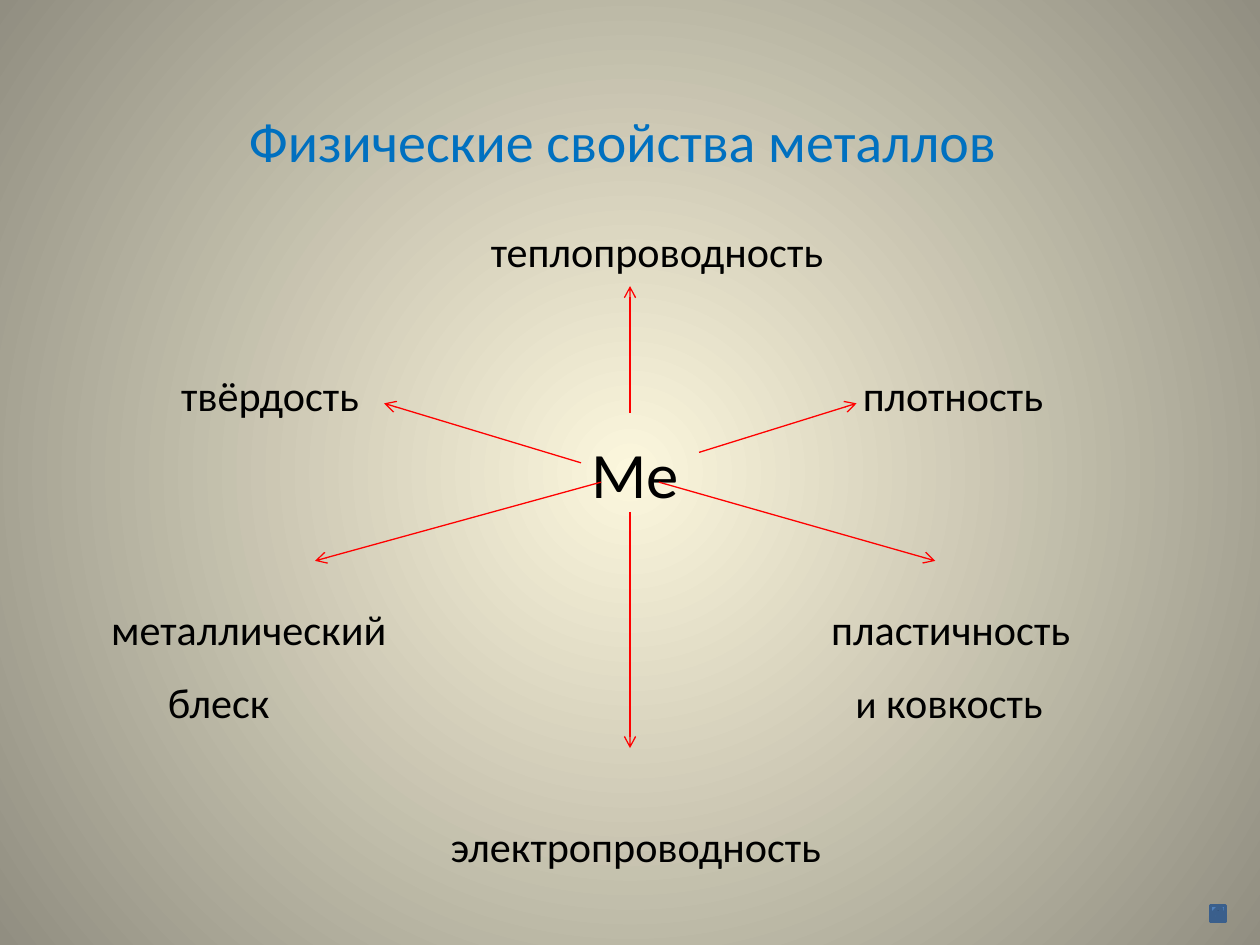
"""Build a slide showing the physical properties of metals around the symbol Ме."""
from lxml import etree
from pptx import Presentation
from pptx.dml.color import RGBColor
from pptx.enum import shapes, text
from pptx.oxml import parse_xml
from pptx.oxml.ns import nsdecls, qn
from pptx.util import Pt

COLORS = {"title": "0070C0", "label": "000000", "arrow": "FF0000", "center": "FCF7DD",
          "edge": "918E81", "button": "4F81BD", "button_line": "3A5F8C"}
FONT = "Calibri"
LINE_GAP = 12.4
SIZE = 24.1

TITLE = "Физические свойства металлов"
LABELS = [
    (280.5, 128.5, 210, [(0, [("теплопроводность", SIZE)])]),
    (103.5, 211, 120, [(0, [("твёрдость", SIZE)])]),
    (493, 211, 120, [(0, [("плотность", SIZE)])]),
    (338, 248, 70, [(0, [("Ме", 37)])]),
    (63.5, 345, 180, [(0, [("металлический", SIZE)]), (32.5, [("блеск", SIZE)])]),
    (475, 345, 160, [(0, [("пластичность", SIZE)]), (14, [("и", 22.2), (" ковкость", SIZE)])]),
    (257.5, 469, 230, [(0, [("электропроводность", SIZE)])]),
]
ARROWS = [
    ((360, 236), (360, 163.5)),
    ((399.5, 258.5), (489.5, 230.5)),
    ((332, 264.5), (219.5, 230.5)),
    ((343.5, 275.5), (180, 320.5)),
    ((376.5, 275.5), (534.5, 320.5)),
    ((360, 292.5), (360, 427.5)),
]
HOME = (691.75, 517.5, 8.64, 8.64)


def rgb(name):
    return RGBColor.from_string(COLORS[name])


def add_text(slide, box, lines, color, frame_format):
    frame = slide.shapes.add_textbox(*map(Pt, box)).text_frame
    for key, value in frame_format.items():
        setattr(frame, key, value)
    for number, (indent, pieces) in enumerate(lines):
        paragraph = frame.add_paragraph() if number else frame.paragraphs[0]
        paragraph.space_before = Pt(LINE_GAP if number else 0)
        paragraph._p.get_or_add_pPr().set("marL", str(Pt(indent)))
        for words, size in pieces:
            run = paragraph.add_run()
            run.text = words
            for key, value in {"name": FONT, "size": Pt(size)}.items():
                setattr(run.font, key, value)
            run.font.color.rgb = rgb(color)
    return frame


def add_background(slide):
    stops = "".join(f'<a:gs pos="{pos}"><a:srgbClr val="{COLORS[name]}"/></a:gs>'
                    for pos, name in ((0, "center"), (100000, "edge")))
    middle = " ".join(f'{side}="50000"' for side in "ltrb")
    slide._element.cSld.insert(0, parse_xml(
        f'<p:bg {nsdecls("p", "a")}><p:bgPr><a:gradFill><a:gsLst>{stops}</a:gsLst>'
        f'<a:path path="circle"><a:fillToRect {middle}/></a:path></a:gradFill>'
        '<a:effectLst/></p:bgPr></p:bg>'))


def add_arrow(slide, start, end):
    arrow = slide.shapes.add_connector(
        shapes.MSO_CONNECTOR.STRAIGHT, *map(Pt, start + end))
    arrow.line.color.rgb = rgb("arrow")
    arrow.line.width = Pt(0.75)
    etree.SubElement(arrow.line._get_or_add_ln(), qn("a:tailEnd"), type="arrow")
    etree.SubElement(arrow._element.spPr, qn("a:effectLst"))


def main():
    deck = Presentation()
    deck.slide_width, deck.slide_height = Pt(720), Pt(540)
    slide = deck.slides.add_slide(deck.slide_layouts[6])
    add_background(slide)

    heading = add_text(slide, (50, 22, 612, 116), [(0, [(TITLE, 32)])], "title",
                       {"word_wrap": True, "vertical_anchor": text.MSO_ANCHOR.MIDDLE})
    heading.paragraphs[0].alignment = text.PP_ALIGN.CENTER

    margins = dict.fromkeys(
        ("margin_left", "margin_top", "margin_right", "margin_bottom"), 0)
    for left, top, width, lines in LABELS:
        height = sum(1.22 * pieces[-1][1] for _, pieces in lines) + LINE_GAP * (len(lines) - 1)
        add_text(slide, (left, top, width, height), lines, "label",
                 {"word_wrap": True, **margins})

    for start, end in ARROWS:
        add_arrow(slide, start, end)

    home = slide.shapes.add_shape(shapes.MSO_SHAPE.ACTION_BUTTON_HOME, *map(Pt, HOME))
    home.shadow.inherit = False
    home.fill.solid()
    home.fill.fore_color.rgb = rgb("button")
    home.line.color.rgb = rgb("button_line")
    home.line.width = Pt(2)

    deck.save("out.pptx")


if __name__ == "__main__":
    main()
